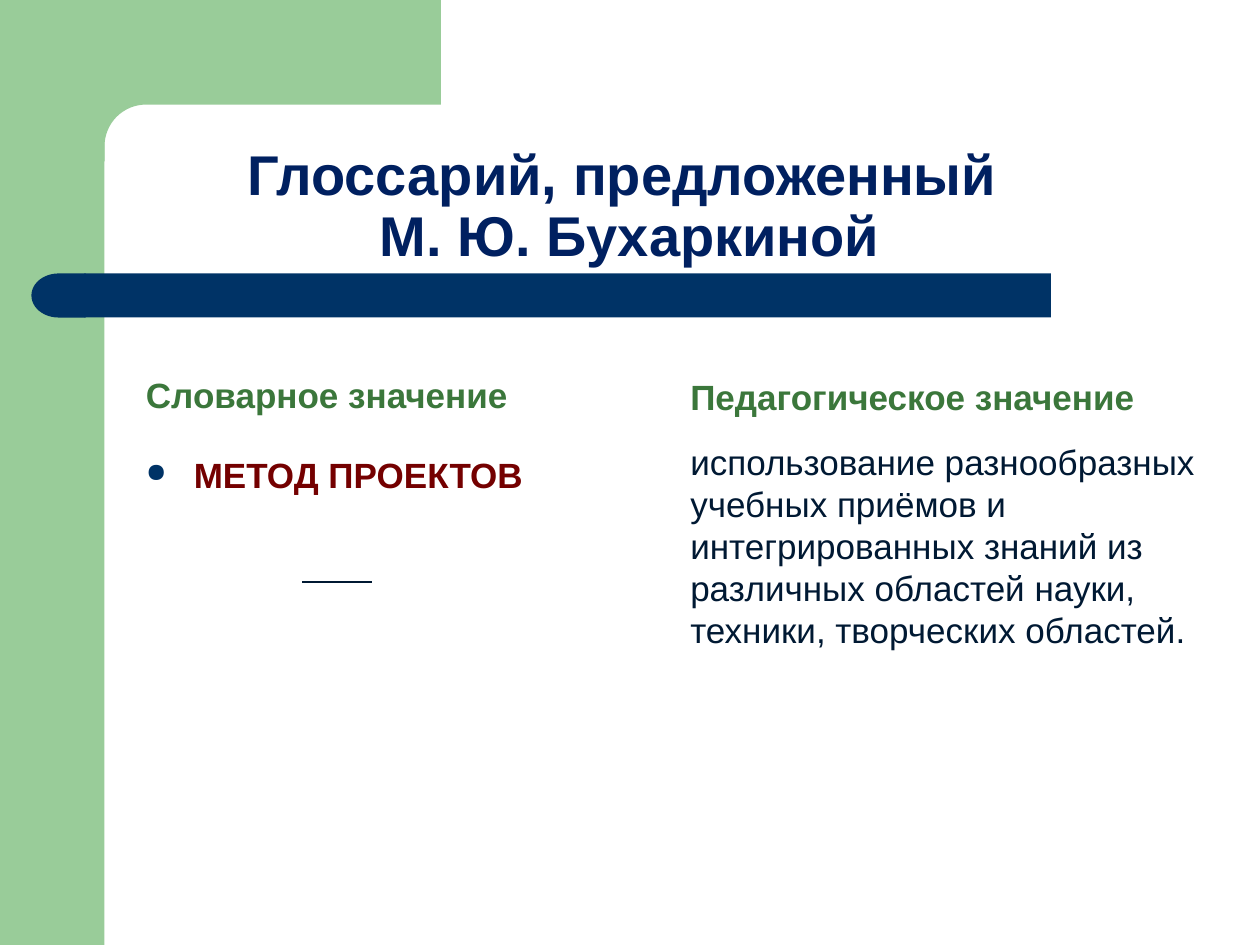
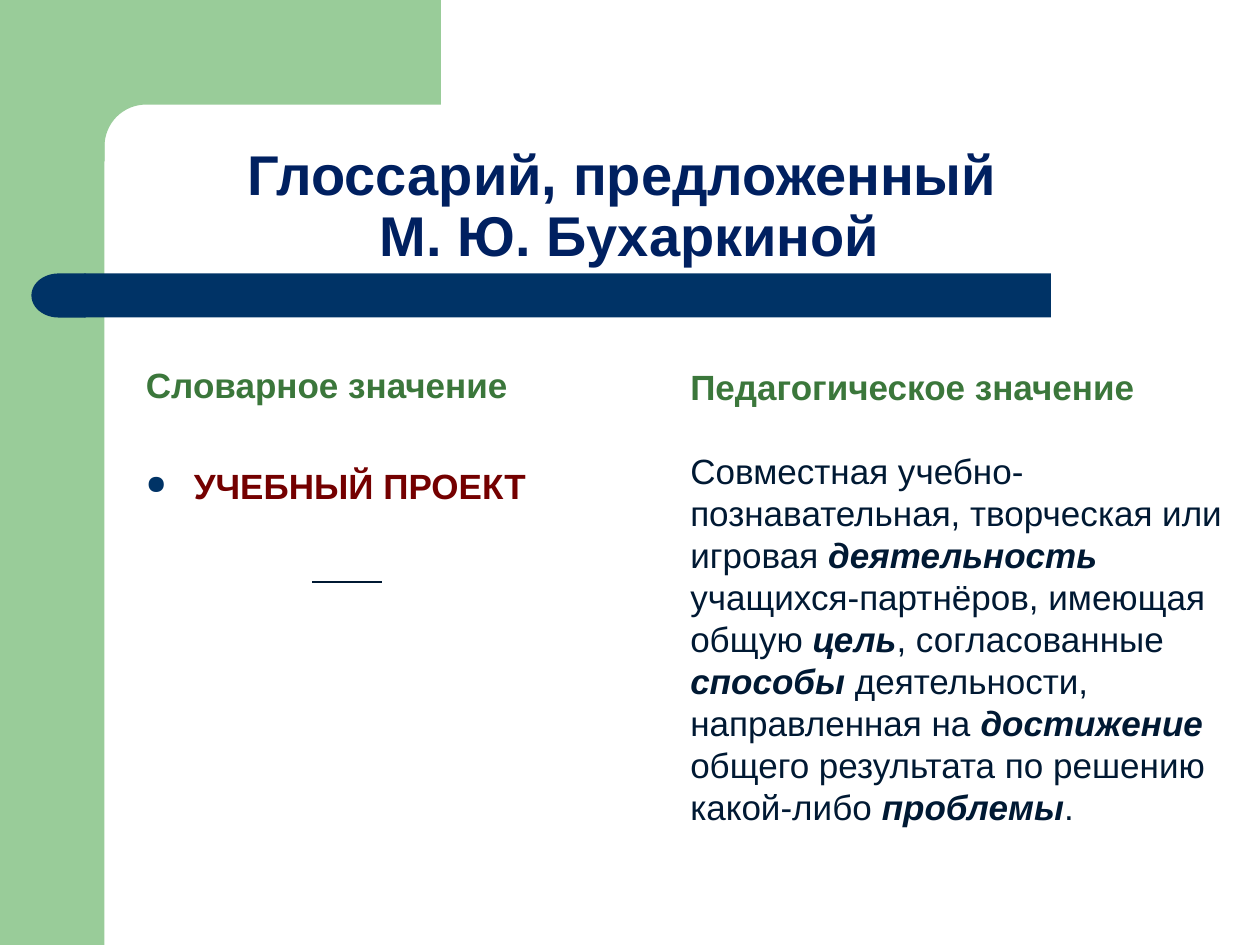
from math import cos, pi, sin

from lxml.etree import SubElement
from pptx import Presentation
from pptx.dml.color import RGBColor
from pptx.enum.shapes import MSO_CONNECTOR, MSO_SHAPE
from pptx.enum.text import MSO_ANCHOR, PP_ALIGN
from pptx.oxml.ns import qn
from pptx.util import Emu, Pt

PX = 9144  # 100 px to the inch
COLORS = {
    "leaf": "99CC99", "navy": "003366", "title": "002060",
    "head": "3B773B", "term": "740000", "ink": "001933",
}
TITLE = "Глоссарий, предложенный \vМ. Ю. Бухаркиной"
HEADS = ("Словарное значение", "Педагогическое значение")
COL_W, LEFT, RIGHT = 442, 106, 538

# Asterisks enclose the emphasised words
ENTRIES = [
    dict(term="МЕТОД ПРОЕКТОВ", head_y=265, term_y=355, text_y=345, dash_x=240,
         text="использование разнообразных учебных приёмов и интегрированных "
              "знаний из различных областей науки, техники, творческих областей."),
    dict(term="УЧЕБНЫЙ ПРОЕКТ", head_y=257, term_y=364, text_y=352, dash_x=248,
         text="Совместная учебно-познавательная, творческая или игровая "
              "*деятельность* учащихся-партнёров, имеющая общую *цель*, "
              "согласованные *способы* деятельности, направленная на "
              "*достижение* общего результата по решению какой-либо *проблемы*."),
]


def color(name):
    return RGBColor.from_string(COLORS[name])


class Deck:
    def __init__(self):
        self.prs = Presentation()
        self.prs.slide_width, self.prs.slide_height = Emu(1000 * PX), Emu(750 * PX)

    def page(self):
        self.slide = self.prs.slides.add_slide(self.prs.slide_layouts[6])
        self.shapes = self.slide.shapes

    def paint(self, shape, fill):
        shape.shadow.inherit = False
        shape.fill.solid()
        shape.fill.fore_color.rgb = color(fill)
        shape.line.fill.background()

    def shape(self, kind, x, y, w, h, fill, flip=False):
        shape = self.shapes.add_shape(kind, x * PX, y * PX, w * PX, h * PX)
        self.paint(shape, fill)
        if flip:
            shape.element.spPr.get_or_add_xfrm().set("flipH", "1")

    def outline(self, points, fill):
        points = [(x * PX, y * PX) for x, y in points]
        path = self.shapes.build_freeform(*points[0])
        path.add_line_segments(points[1:])
        self.paint(path.convert_to_shape(), fill)

    def line(self, x1, y1, x2, y2, ink):
        line = self.shapes.add_connector(
            MSO_CONNECTOR.STRAIGHT, x1 * PX, y1 * PX, x2 * PX, y2 * PX)
        line.line.color.rgb = color(ink)
        line.line.width = Pt(0.75)
        SubElement(line.element.spPr, qn("a:effectLst"))

    def text(self, x, y, w, h, text, ink, size=20, bold=False,
             low=False, center=False, bullet=False):
        frame = self.shapes.add_textbox(x * PX, y * PX, w * PX, h * PX).text_frame
        frame.word_wrap = True
        frame.vertical_anchor = MSO_ANCHOR.BOTTOM if low else MSO_ANCHOR.TOP
        para = frame.paragraphs[0]
        if bullet:
            self.bullet(para)
        if center:
            para.alignment = PP_ALIGN.CENTER
            para.line_spacing = 0.9
        font = para.font
        font.name, font.size, font.bold = "Arial", Pt(size), bold
        font.color.rgb = color(ink)
        parts = text.split("*")
        if len(parts) == 1:
            para.text = text
            return
        for i, part in enumerate(parts):
            run = para.add_run()
            run.text = part
            if i % 2:
                run.font.bold = run.font.italic = True

    def bullet(self, para):
        props = para._p.get_or_add_pPr()
        props.set("marL", str(38 * PX))
        props.set("indent", str(-38 * PX))
        tint = SubElement(props, qn("a:buClr"))
        SubElement(tint, qn("a:srgbClr")).set("val", COLORS["navy"])
        SubElement(props, qn("a:buSzPct")).set("val", "75000")
        SubElement(props, qn("a:buChar")).set("char", "●")

    def frame(self):
        # Green side band and top block with a rounded inner corner
        self.shape(MSO_SHAPE.RECTANGLE, 0, 0, 83, 750, "leaf")
        turns = [pi / 2 * i / 16 for i in range(17)]
        curve = [(116 - 33 * sin(t), 116 - 33 * cos(t)) for t in turns]
        self.outline([(350, 0), (350, 83), *curve, (83, 128), (50, 128), (50, 0)],
                     "leaf")
        # Navy bar with a round end
        self.shape(MSO_SHAPE.RECTANGLE, 67, 217, 767, 35, "navy")
        self.shape(MSO_SHAPE.FLOWCHART_DELAY, 25, 217, 43, 35, "navy", flip=True)
        # Title
        self.text(50, 93, 900, 125, TITLE, "title", size=32, bold=True,
                  low=True, center=True)

    def entry(self, term, text, head_y, term_y, text_y, dash_x):
        # Column heads
        for i, (x, head) in enumerate(zip((LEFT, RIGHT), HEADS)):
            self.text(x, head_y + i, COL_W, 70, head, "head", bold=True, low=True)
        # Term and its meaning
        self.text(LEFT, term_y, COL_W, 432, term, "term", bold=True, bullet=True)
        self.text(RIGHT, text_y, COL_W, 432, text, "ink")
        self.line(dash_x, 462, dash_x + 55, 462, "ink")


def main():
    deck = Deck()
    for entry in ENTRIES:
        deck.page()
        deck.frame()
        deck.entry(**entry)
    deck.prs.save("out.pptx")


if __name__ == "__main__":
    main()
